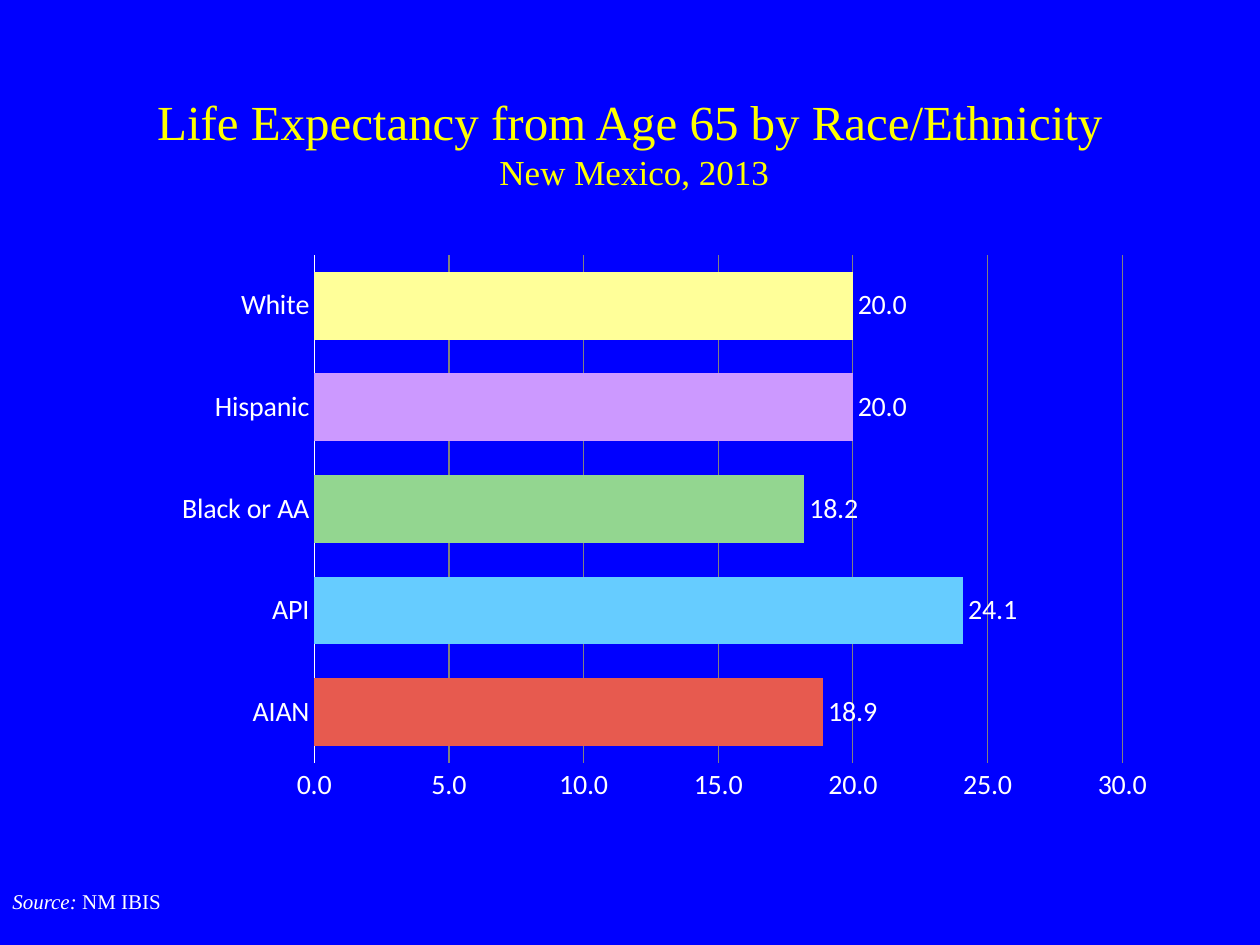
from lxml.etree import SubElement
from pptx import Presentation
from pptx.chart.data import CategoryChartData
from pptx.dml.color import RGBColor
from pptx.enum.chart import XL_CHART_TYPE as ChartType, XL_LABEL_POSITION as LabelPosition
from pptx.enum.chart import XL_TICK_MARK as TickMark
from pptx.enum.text import MSO_ANCHOR as Anchor, MSO_AUTO_SIZE as AutoSize, PP_ALIGN as Align
from pptx.oxml.ns import qn
from pptx.util import Emu, Pt

PX_PER_INCH = 126
BLUE = RGBColor(0x00, 0x00, 0xFF)
YELLOW = RGBColor(0xFF, 0xFF, 0x00)
WHITE = RGBColor(0xFF, 0xFF, 0xFF)
GRAY = RGBColor(0x80, 0x80, 0x80)
SERIF, SANS = "Times New Roman", "Calibri"

# Bottom to top: group, years of life expected, bar colour
GROUPS = [
    ("AIAN", 18.9, RGBColor(0xE7, 0x5A, 0x4F)),
    ("API", 24.1, RGBColor(0x66, 0xCC, 0xFF)),
    ("Black or AA", 18.2, RGBColor(0x93, 0xD6, 0x90)),
    ("Hispanic", 20.0, RGBColor(0xCC, 0x99, 0xFF)),
    ("White", 20.0, RGBColor(0xFF, 0xFF, 0x99)),
]


def px(length):
    return Emu(round(length * 914400 / PX_PER_INCH))


def set_font(font, name, size, color):
    font.name, font.size = name, Pt(size)
    font.color.rgb = color


def add_run(paragraph, text, size, color, italic=False):
    run = paragraph.add_run()
    run.text = text
    set_font(run.font, SERIF, size, color)
    run.font.italic = italic


def fill_title(slide, left, top, width, height):
    title = slide.shapes.title
    title.left, title.top = px(left), px(top)
    title.width, title.height = px(width), px(height)
    frame = title.text_frame
    frame.auto_size = AutoSize.NONE
    frame.vertical_anchor = Anchor.MIDDLE
    heading = frame.paragraphs[0]
    heading.alignment = Align.CENTER
    add_run(heading, "Life Expectancy from Age 65 by Race/Ethnicity", 28, YELLOW)
    heading.add_line_break()
    add_run(heading, " New Mexico, 2013", 20, YELLOW)


def place_plot(chart, **fractions):
    """Fix the inner plot area at fractions x, y, w, h of the chart."""
    plot_area = chart._chartSpace.chart.plotArea
    for old_layout in plot_area.findall(qn("c:layout")):
        plot_area.remove(old_layout)
    layout = SubElement(plot_area, qn("c:layout"))
    plot_area.insert(0, layout)
    manual = SubElement(layout, qn("c:manualLayout"))
    settings = {"layoutTarget": "inner", "xMode": "edge", "yMode": "edge", **fractions}
    for tag, value in settings.items():
        SubElement(manual, qn(f"c:{tag}")).set("val", str(value))


def style_axes(chart):
    groups_axis, years_axis = chart.category_axis, chart.value_axis
    for axis in (groups_axis, years_axis):
        axis.major_tick_mark = axis.minor_tick_mark = TickMark.NONE
        set_font(axis.tick_labels.font, SANS, 16, WHITE)
    groups_axis.format.line.color.rgb = WHITE
    groups_axis.format.line.width = Pt(0.75)

    years_axis.minimum_scale, years_axis.maximum_scale, years_axis.major_unit = 0, 30, 5
    years_axis.tick_labels.number_format = "#,##0.0"
    years_axis.tick_labels.number_format_is_linked = False
    years_axis.format.line.fill.background()
    years_axis.has_major_gridlines = True
    grid = years_axis.major_gridlines.format.line
    grid.color.rgb, grid.width = GRAY, Pt(0.75)


def add_life_chart(slide, left, top, width, height):
    names, years, colors = zip(*GROUPS)
    data = CategoryChartData(number_format="0.0")
    data.categories = names
    data.add_series("Series 1", years)
    chart = slide.shapes.add_chart(
        ChartType.BAR_CLUSTERED, px(left), px(top), px(width), px(height), data
    ).chart
    chart.has_legend = chart.has_title = False
    set_font(chart.font, SERIF, 10, WHITE)
    place_plot(chart, x=0.22, y=0.04, w=0.74, h=0.85)
    style_axes(chart)

    bars = chart.plots[0]
    bars.gap_width = 50
    bars.vary_by_categories = False
    expectancy = bars.series[0]
    for index, color in enumerate(colors):
        fill = expectancy.points[index].format.fill
        fill.solid()
        fill.fore_color.rgb = color

    labels = expectancy.data_labels
    labels.show_value = True
    labels.position = LabelPosition.OUTSIDE_END
    labels.number_format, labels.number_format_is_linked = "0.0", False
    set_font(labels.font, SANS, 16, WHITE)


def add_source(slide, left, top, width, height):
    frame = slide.shapes.add_textbox(px(left), px(top), px(width), px(height)).text_frame
    frame.word_wrap = True
    frame.auto_size = AutoSize.SHAPE_TO_FIT_TEXT
    credit = frame.paragraphs[0]
    add_run(credit, "Source: ", 12, WHITE, italic=True)
    add_run(credit, "NM IBIS", 12, WHITE)


def main():
    deck = Presentation()
    deck.slide_width, deck.slide_height = px(1260), px(945)
    slide = deck.slides.add_slide(deck.slide_layouts[5])
    background = slide.background.fill
    background.solid()
    background.fore_color.rgb = BLUE
    add_life_chart(slide, 74, 231, 1092, 598)
    fill_title(slide, 94, 63, 1072, 158)
    add_source(slide, 0, 882, 860, 38)
    deck.save("out.pptx")


if __name__ == "__main__":
    main()
